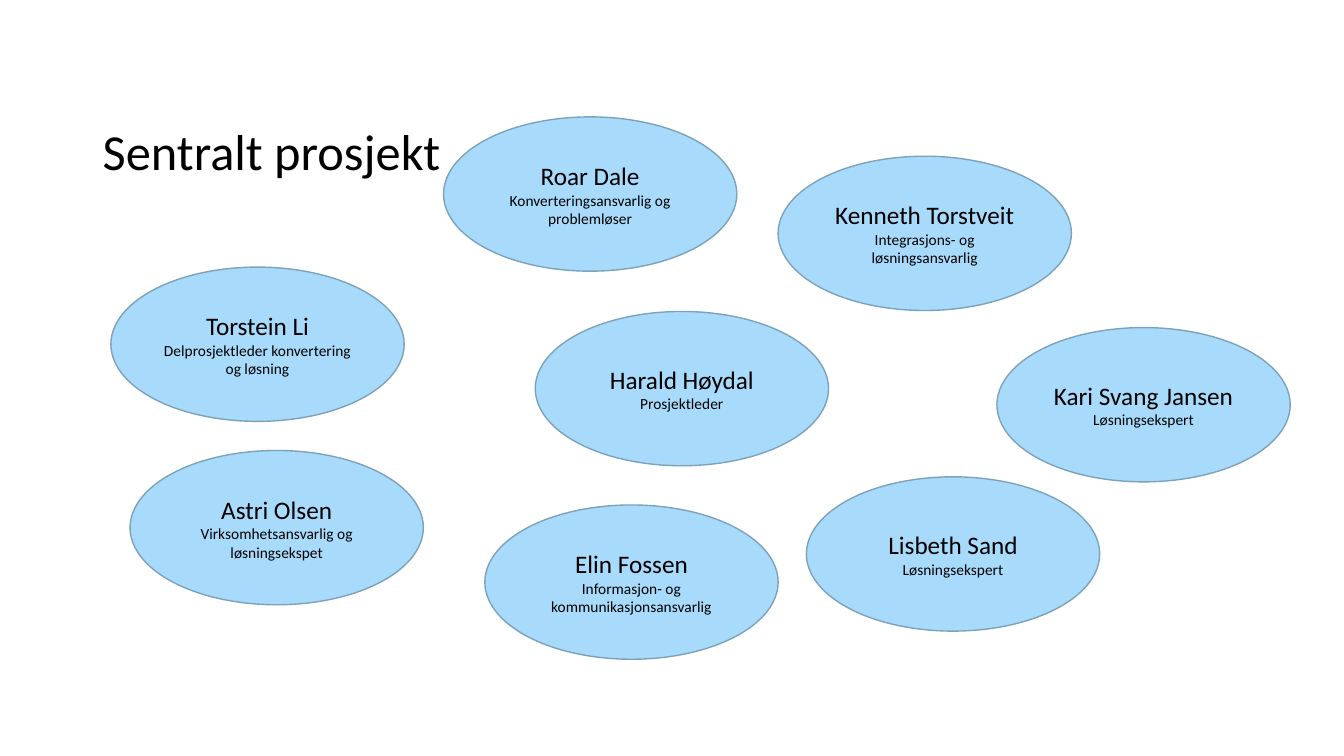
from pptx import Presentation
from pptx.dml.color import RGBColor
from pptx.enum.shapes import MSO_SHAPE as Preset
from pptx.enum.text import MSO_ANCHOR as Anchor, MSO_AUTO_SIZE as AutoSize, PP_ALIGN as Align
from pptx.util import Pt

COLORS = {"text": "000000", "bubble": "A8DBFB", "outline": "7CA2BA"}
BUBBLE_SIZE = (209.5, 110.2)
TEAM = [
    ("Torstein Li", "Delprosjektleder konvertering og løsning", 79.2, 190.8),
    ("Roar Dale", "Konverteringsansvarlig og problemløser", 316.8, 83.5),
    ("Kenneth Torstveit", "Integrasjons- og løsningsansvarlig", 555.8, 111.6),
    ("Astri Olsen", "Virksomhetsansvarlig og løsningsekspet", 92.9, 321.8),
    ("Elin Fossen", "Informasjon- og kommunikasjonsansvarlig", 346.3, 360.7),
    ("Lisbeth Sand", "Løsningsekspert", 576, 340.6),
    ("Kari Svang Jansen", "Løsningsekspert", 712.1, 234),
    ("Harald Høydal", "Prosjektleder", 382.3, 222.5),
]


class TeamSlide:
    """Draws the parts of the team slide in one shared style."""

    def __init__(self, slide, font_name="Calibri"):
        self.slide = slide
        self.font_name = font_name

    def color(self, key):
        return RGBColor.from_string(COLORS[key])

    def set_text(self, paragraph, text, size, align):
        paragraph.text = text
        paragraph.alignment = align
        font = paragraph.font
        font.name, font.size = self.font_name, Pt(size)
        font.color.rgb = self.color("text")

    def heading(self, text, left, top, width, height):
        title = self.slide.shapes.title
        title.left, title.top = Pt(left), Pt(top)
        title.width, title.height = Pt(width), Pt(height)
        frame = title.text_frame
        frame.auto_size = AutoSize.NONE
        frame.vertical_anchor = Anchor.BOTTOM
        self.set_text(frame.paragraphs[0], text, 36, Align.LEFT)
        frame.paragraphs[0].line_spacing = 0.9

    def member(self, person, role, left, top):
        width, height = BUBBLE_SIZE
        bubble = self.slide.shapes.add_shape(
            Preset.OVAL, Pt(left), Pt(top), Pt(width), Pt(height))
        bubble.shadow.inherit = False
        bubble.fill.solid()
        bubble.fill.fore_color.rgb = self.color("bubble")
        bubble.line.color.rgb = self.color("outline")
        bubble.line.width = Pt(1)
        frame = bubble.text_frame
        frame.word_wrap = True
        frame.vertical_anchor = Anchor.MIDDLE
        self.set_text(frame.paragraphs[0], person, 18, Align.CENTER)
        self.set_text(frame.add_paragraph(), role, 11, Align.CENTER)


def main():
    deck = Presentation()
    deck.slide_width, deck.slide_height = Pt(960), Pt(540)
    team_slide = TeamSlide(deck.slides.add_slide(deck.slide_layouts[5]))
    team_slide.heading("Sentralt prosjekt", 66.2, 28.8, 770.4, 104.4)
    for person, role, left, top in TEAM:
        team_slide.member(person, role, left, top)
    deck.save("out.pptx")


if __name__ == "__main__":
    main()
